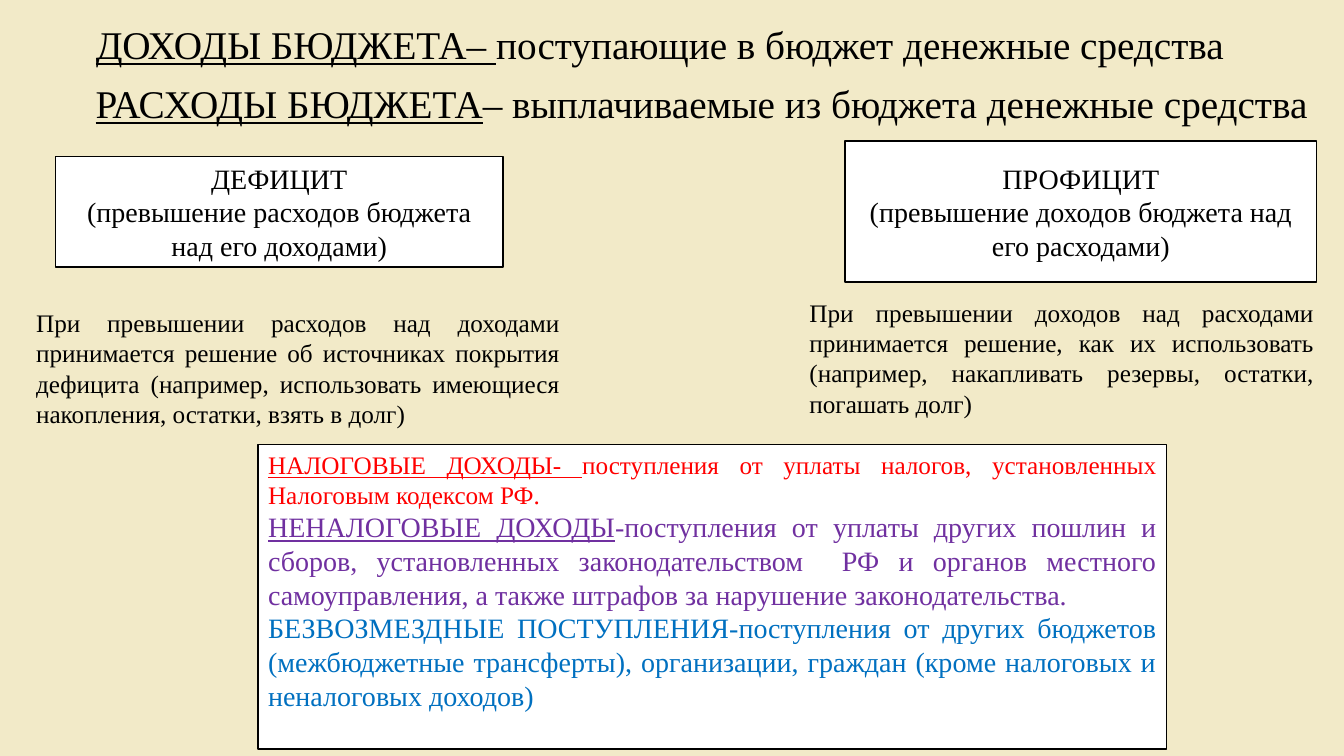
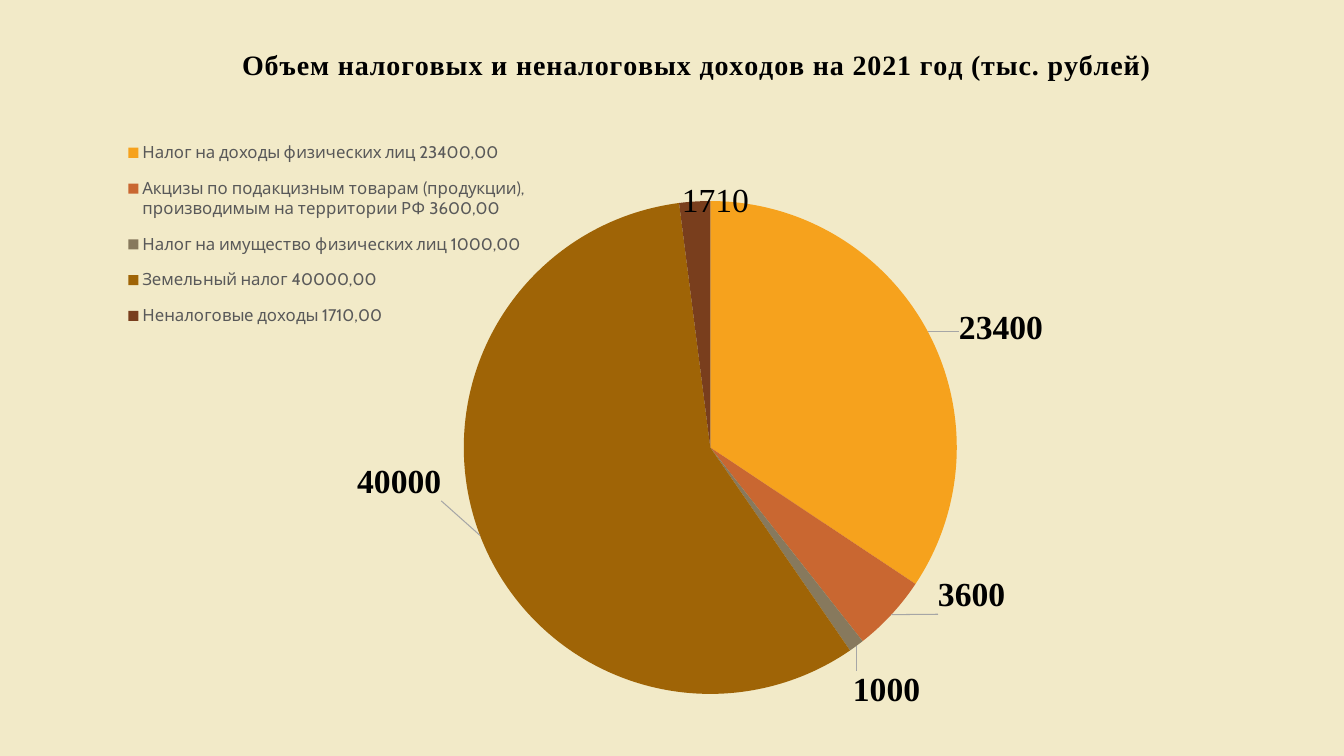
from dataclasses import dataclass
from typing import Optional

from lxml.etree import SubElement
from pptx import Presentation
from pptx.chart.chart import Chart
from pptx.chart.data import CategoryChartData
from pptx.dml.color import RGBColor
from pptx.enum.chart import XL_CHART_TYPE, XL_LABEL_POSITION, XL_LEGEND_POSITION
from pptx.enum.shapes import MSO_SHAPE
from pptx.enum.text import MSO_ANCHOR, MSO_AUTO_SIZE, PP_ALIGN
from pptx.oxml import parse_xml
from pptx.oxml.ns import nsdecls, qn
from pptx.presentation import Presentation as Deck
from pptx.slide import Slide
from pptx.text.text import TextFrame
from pptx.util import Inches, Pt

CREAM = RGBColor(0xF2, 0xEA, 0xC8)
WHITE = RGBColor(0xFF, 0xFF, 0xFF)
BLACK = RGBColor(0x00, 0x00, 0x00)
GRAY = RGBColor(0x59, 0x59, 0x59)
RED = RGBColor(0xFF, 0x00, 0x00)
PURPLE = RGBColor(0x70, 0x30, 0xA0)
BLUE = RGBColor(0x00, 0x70, 0xC0)
SERIF, SANS = "Times New Roman", "Cabin"
LINE_HEIGHT = 1.2
TITLE_ONLY, BLANK = 5, 6


@dataclass(frozen=True)
class Box:
    left: float
    top: float
    width: float
    height: float

    def lengths(self) -> tuple[Inches, ...]:
        return tuple(Inches(v) for v in (self.left, self.top, self.width, self.height))


@dataclass(frozen=True)
class Passage:
    """A paragraph that may open with an underlined term."""
    text: str
    size: int
    term: str = ""
    color: RGBColor = BLACK


@dataclass(frozen=True)
class Panel:
    box: Box
    passages: tuple[Passage, ...]
    align: PP_ALIGN
    anchor: MSO_ANCHOR = MSO_ANCHOR.MIDDLE
    bordered: bool = True


@dataclass(frozen=True)
class Income:
    name: str
    share: int
    amount: str
    color: RGBColor
    label_shift: tuple[float, float]
    bold: bool = True


HEADINGS = (
    Passage("поступающие в бюджет денежные средства", 28, "ДОХОДЫ БЮДЖЕТА– "),
    Passage("– выплачиваемые из бюджета денежные средства", 28, "РАСХОДЫ БЮДЖЕТА"),
)
HEADING_BOX = Box(0.85, 0.15, 12.4, 0.57)
HEADING_STEP = 0.59

PANELS = (
    Panel(Box(0.55, 1.55, 4.44, 1.1),
          (Passage("ДЕФИЦИТ", 20),
           Passage("(превышение расходов бюджета над его доходами)", 20)),
          PP_ALIGN.CENTER),
    Panel(Box(8.38, 1.4, 4.68, 1.4),
          (Passage("ПРОФИЦИТ", 20),
           Passage("(превышение доходов бюджета над его расходами)", 20)),
          PP_ALIGN.CENTER),
    Panel(Box(2.56, 4.41, 9.01, 3.02),
          (Passage("поступления от уплаты налогов, установленных Налоговым кодексом РФ.",
                   18, "НАЛОГОВЫЕ ДОХОДЫ- ", RED),
           Passage("-поступления от уплаты других пошлин и сборов, установленных "
                   "законодательством  РФ и органов местного самоуправления, а также "
                   "штрафов за нарушение законодательства.",
                   20, "НЕНАЛОГОВЫЕ ДОХОДЫ", PURPLE),
           Passage("БЕЗВОЗМЕЗДНЫЕ ПОСТУПЛЕНИЯ-поступления от других бюджетов "
                   "(межбюджетные трансферты), организации, граждан (кроме налоговых "
                   "и неналоговых доходов)", 20, color=BLUE)),
          PP_ALIGN.JUSTIFY, MSO_ANCHOR.TOP),
    Panel(Box(0.26, 3, 5.39, 1.31),
          (Passage("При превышении расходов над доходами принимается решение об "
                   "источниках покрытия дефицита (например, использовать имеющиеся "
                   "накопления, остатки, взять в долг)", 18),),
          PP_ALIGN.JUSTIFY, MSO_ANCHOR.TOP, bordered=False),
    Panel(Box(7.93, 2.9, 5.2, 1.31),
          (Passage("При превышении доходов над расходами принимается решение, как их "
                   "использовать (например, накапливать резервы, остатки, погашать "
                   "долг)", 18),),
          PP_ALIGN.JUSTIFY, MSO_ANCHOR.TOP, bordered=False),
)

CHART_TITLE = "Объем налоговых и неналоговых доходов на 2021 год (тыс. рублей)"
CHART_BOX = Box(0.99, 0.23, 11.84, 7.17)
# Places inside the chart, in inches from its top left corner
TITLE_PLACE = (1.36, 0.19)
LEGEND_PLACE = Box(0.15, 1.03, 4.2, 2.13)
PIE_PLACE = Box(3.61, 1.25, 4.89, 5.92)

INCOMES = (
    Income("Налог на доходы физических лиц 23400,00", 34, "23400",
           RGBColor(0xF6, 0xA2, 0x1D), (0.26, 0.18)),
    Income("Акцизы по подакцизным товарам (продукции), производимым на территории РФ "
           "3600,00", 5, "3600", RGBColor(0xC9, 0x67, 0x31), (0.42, -0.42)),
    Income("Налог на имущество физических лиц 1000,00", 1, "1000",
           RGBColor(0x87, 0x79, 0x5D), (-0.07, 0.2)),
    Income("Земельный налог 40000,00", 57, "40000",
           RGBColor(0x9F, 0x64, 0x06), (-0.33, -0.74)),
    Income("Неналоговые доходы 1710,00", 2, "1710",
           RGBColor(0x79, 0x3E, 0x1D), (0.21, 0.24), bold=False),
)


def write(frame: TextFrame, passages: tuple[Passage, ...], align: PP_ALIGN,
          anchor: MSO_ANCHOR) -> None:
    frame.word_wrap = True
    frame.auto_size = MSO_AUTO_SIZE.NONE
    frame.vertical_anchor = anchor
    for index, passage in enumerate(passages):
        paragraph = frame.add_paragraph() if index else frame.paragraphs[0]
        paragraph.alignment = align
        paragraph.line_spacing = Pt(passage.size * LINE_HEIGHT)
        for text, underlined in ((passage.term, True), (passage.text, False)):
            if not text:
                continue
            run = paragraph.add_run()
            run.text = text
            run.font.name = SERIF
            run.font.size = Pt(passage.size)
            run.font.underline = underlined
            run.font.color.rgb = passage.color


def add_panel(slide: Slide, panel: Panel) -> None:
    if panel.bordered:
        shape = slide.shapes.add_shape(MSO_SHAPE.RECTANGLE, *panel.box.lengths())
        shape.shadow.inherit = False
        shape.fill.solid()
        shape.fill.fore_color.rgb = WHITE
        shape.line.color.rgb = BLACK
        shape.line.width = Pt(1)
    else:
        shape = slide.shapes.add_textbox(*panel.box.lengths())
    write(shape.text_frame, panel.passages, panel.align, panel.anchor)


def set_layout(parent, index: int, x: float, y: float,
               size: Optional[tuple[float, float]] = None, inner: bool = False) -> None:
    """Give a chart part a manual layout, from lengths in inches."""
    for old in parent.findall(qn("c:layout")):
        parent.remove(old)
    layout = parse_xml(f"<c:layout {nsdecls('c')}><c:manualLayout/></c:layout>")
    manual = layout[0]
    settings: list[tuple[str, object]] = [("layoutTarget", "inner")] if inner else []
    if parent.tag != qn("c:dLbl"):
        settings += [("xMode", "edge"), ("yMode", "edge")]
    settings += [("x", x / CHART_BOX.width), ("y", y / CHART_BOX.height)]
    if size:
        settings += [("w", size[0] / CHART_BOX.width), ("h", size[1] / CHART_BOX.height)]
    for tag, value in settings:
        SubElement(manual, qn(f"c:{tag}")).set("val", str(value))
    parent.insert(index, layout)


def place_chart_parts(chart: Chart) -> None:
    root = chart.element
    set_layout(next(root.iter(qn("c:title"))), 1, *TITLE_PLACE)
    for tag, index, place in (("c:legend", 1, LEGEND_PLACE), ("c:plotArea", 0, PIE_PLACE)):
        set_layout(next(root.iter(qn(tag))), index, place.left, place.top,
                   (place.width, place.height), inner=tag == "c:plotArea")
    for label, income in zip(root.iter(qn("c:dLbl")), INCOMES):
        set_layout(label, 1, *income.label_shift)
    # Thin grey leader lines
    next(root.iter(qn("c:showLeaderLines"))).addnext(parse_xml(
        f"<c:leaderLines {nsdecls('c', 'a')}><c:spPr><a:ln w='9525'><a:solidFill>"
        "<a:srgbClr val='A6A6A6'/></a:solidFill></a:ln></c:spPr></c:leaderLines>"))


def write_chart_text(frame: TextFrame, text: str, size: int, bold: bool) -> None:
    frame.text = text
    font = frame.paragraphs[0].runs[0].font
    font.name = SERIF
    font.size = Pt(size)
    font.bold = bold
    font.color.rgb = BLACK


def add_income_chart(slide: Slide) -> None:
    data = CategoryChartData(number_format="0")
    data.categories = [income.name for income in INCOMES]
    data.add_series("Series 1", [income.share for income in INCOMES])
    chart = slide.shapes.add_chart(XL_CHART_TYPE.PIE, *CHART_BOX.lengths(), data).chart
    chart.font.name = SANS
    chart.font.size = Pt(10)
    chart.font.color.rgb = BLACK

    # Title, slightly letterspaced
    write_chart_text(chart.chart_title.text_frame, CHART_TITLE, 20, bold=True)
    next(chart.element.iter(qn("a:rPr"))).set("spc", "50")

    # Legend
    chart.has_legend = True
    chart.legend.position = XL_LEGEND_POSITION.TOP
    chart.legend.include_in_layout = False
    chart.legend.font.name = SANS
    chart.legend.font.size = Pt(12)
    chart.legend.font.color.rgb = GRAY

    # Slices and their labels
    pie = chart.plots[0]
    pie.vary_by_categories = True
    for index, income in enumerate(INCOMES):
        point = pie.series[0].points[index]
        point.format.fill.solid()
        point.format.fill.fore_color.rgb = income.color
        point.format.line.fill.background()
        label = point.data_label
        write_chart_text(label.text_frame, income.amount, 24, income.bold)
        label.position = XL_LABEL_POSITION.BEST_FIT
    place_chart_parts(chart)


def build_definitions(deck: Deck) -> None:
    slide = deck.slides.add_slide(deck.slide_layouts[TITLE_ONLY])
    title = slide.shapes.title
    title.left, title.top, title.width, title.height = HEADING_BOX.lengths()
    write(title.text_frame, HEADINGS[:1], PP_ALIGN.LEFT, MSO_ANCHOR.TOP)
    second = Box(HEADING_BOX.left, HEADING_BOX.top + HEADING_STEP,
                 HEADING_BOX.width, HEADING_BOX.height)
    add_panel(slide, Panel(second, HEADINGS[1:], PP_ALIGN.LEFT, MSO_ANCHOR.TOP,
                           bordered=False))
    for panel in PANELS:
        add_panel(slide, panel)


def build_incomes(deck: Deck) -> None:
    add_income_chart(deck.slides.add_slide(deck.slide_layouts[BLANK]))


def main() -> None:
    deck = Presentation()
    deck.slide_width, deck.slide_height = Inches(13.33), Inches(7.5)
    # Shared background
    backdrop = deck.slide_master.background.fill
    backdrop.solid()
    backdrop.fore_color.rgb = CREAM
    build_definitions(deck)
    build_incomes(deck)
    deck.save("out.pptx")


if __name__ == "__main__":
    main()
